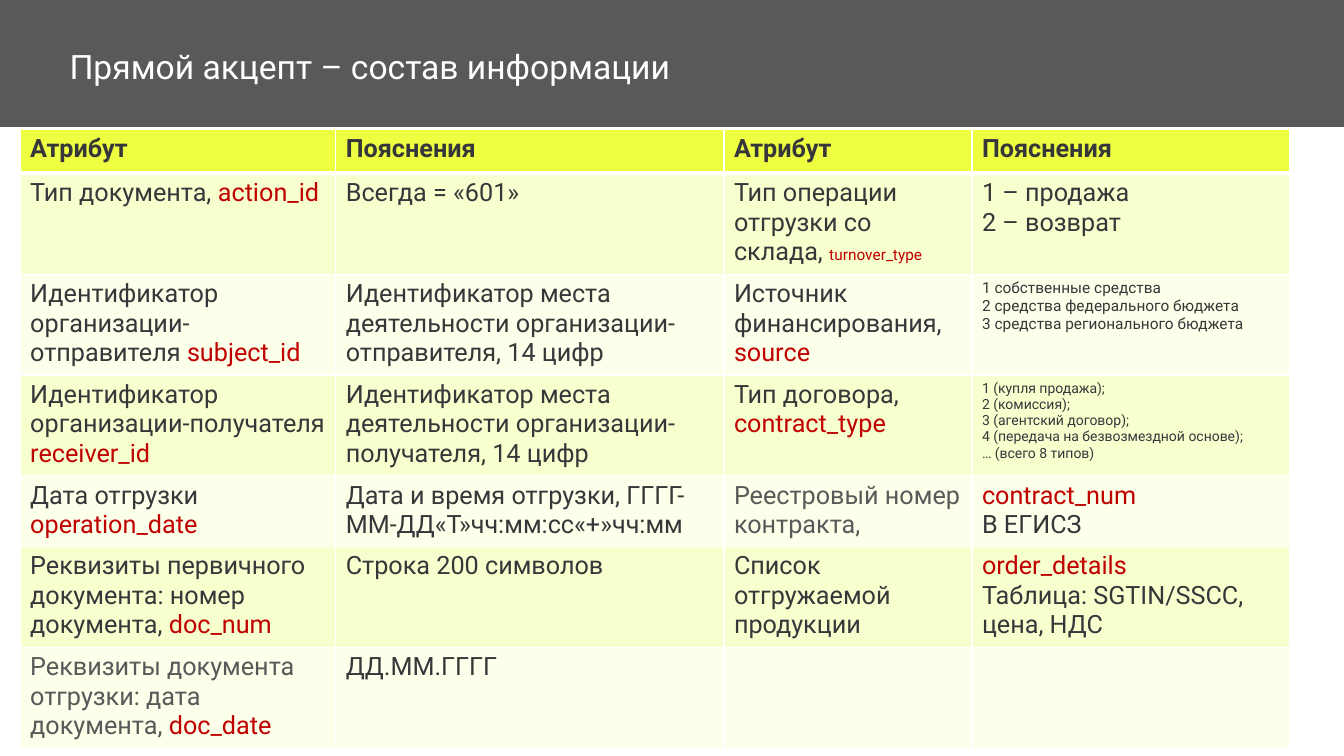
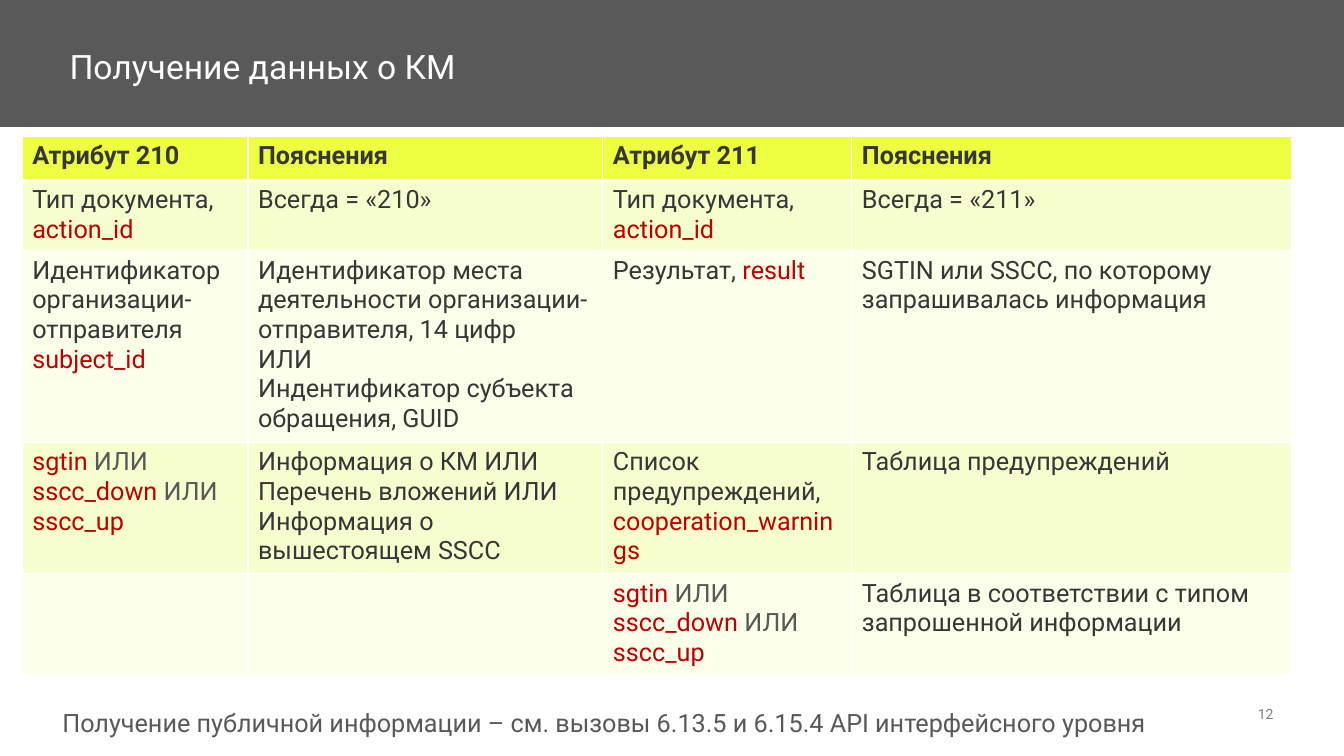
import typing

import pptx
import pptx.dml.color
import pptx.enum.shapes
import pptx.enum.text
import pptx.oxml
import pptx.oxml.ns
import pptx.util

Inches = pptx.util.Inches
Pt = pptx.util.Pt
RGBColor = pptx.dml.color.RGBColor
Align = pptx.enum.text.PP_ALIGN
Anchor = pptx.enum.text.MSO_ANCHOR

FONT = "Roboto"
WHITE = RGBColor(0xFF, 0xFF, 0xFF)
GREY = RGBColor(0x59, 0x59, 0x59)
PAGE_NUMBER_GREY = RGBColor(0x80, 0x80, 0x80)
DARK = RGBColor(0x37, 0x37, 0x3A)
RED = RGBColor(0xC0, 0x00, 0x00)
HEADER_FILL = RGBColor(0xEE, 0xFF, 0x41)
ROW_FILLS = (RGBColor(0xF8, 0xFF, 0xCF), RGBColor(0xFC, 0xFF, 0xE9))


class Cell(typing.NamedTuple):
    """Cell text: one paragraph a line, field names between backticks."""
    text: str
    size: int = 18
    colour: RGBColor = DARK
    field_size: int = 18


CODE_CHOICE = Cell("`sgtin `ИЛИ `sscc_down `ИЛИ `sscc_up`", colour=GREY)

SLIDES = [
    {
        "title": "Прямой акцепт – состав информации",
        "table_at": (0.2, 1.28),
        "columns": (3.13, 3.85, 2.46, 3.15),
        "row_heights": (0.44, 0.98, 0.98, 0.98, 0.69, 0.98, 0.98),
        "rows": [
            ("Атрибут", "Пояснения", "Атрибут", "Пояснения"),
            ("Тип документа, `action_id`", "Всегда = «601»",
             Cell("Тип операции отгрузки со\nсклада, `turnover_type`", field_size=11),
             "1 – продажа\n2 – возврат"),
            ("Идентификатор организации-отправителя `subject_id`",
             "Идентификатор места деятельности организации-отправителя, 14 цифр",
             "Источник финансирования, `source`",
             Cell("1 собственные средства\n2 средства федерального бюджета\n"
                  "3 средства регионального бюджета", size=11)),
            ("Идентификатор организации-получателя `receiver_id`",
             "Идентификатор места деятельности организации-получателя, 14 цифр",
             "Тип договора, `contract_type`",
             Cell("1 (купля продажа);\n2 (комиссия);\n3 (агентский договор);\n"
                  "4 (передача на безвозмездной основе);\n… (всего 8 типов)", size=10)),
            ("Дата отгрузки `operation_date`",
             "Дата и время отгрузки, ГГГГ-ММ-ДД«Т»чч:мм:сс«+»чч:мм",
             Cell("Реестровый номер контракта,", colour=GREY),
             "`contract_num`\nВ ЕГИСЗ"),
            ("Реквизиты первичного\nдокумента: номер документа, `doc_num`",
             "Строка 200 символов", "Список отгружаемой продукции",
             "`order_details`\nТаблица: SGTIN/SSCC, цена, НДС"),
            (Cell("Реквизиты документа отгрузки: дата документа, `doc_date`", colour=GREY),
             "ДД.ММ.ГГГГ", "", ""),
        ],
    },
    {
        "title": "Получение данных о КМ",
        "table_at": (0.22, 1.35),
        "columns": (2.24, 3.52, 2.47, 4.36),
        "row_heights": (0.44, 0.69, 1.86, 1.27, 0.98),
        "rows": [
            ("Атрибут 210", "Пояснения", "Атрибут 211", "Пояснения"),
            ("Тип документа, `action_id`", "Всегда = «210»",
             "Тип документа, `action_id`", "Всегда = «211»"),
            ("Идентификатор организации-отправителя `subject_id`",
             "Идентификатор места деятельности организации-отправителя, 14 цифр\n"
             "ИЛИ\nИндентификатор субъекта обращения, GUID",
             "Результат, `result`",
             "SGTIN или SSCC, по которому запрашивалась информация"),
            (CODE_CHOICE,
             "Информация о КМ ИЛИ\nПеречень вложений ИЛИ\nИнформация о вышестоящем SSCC",
             "Список предупреждений, `cooperation_warnings`",
             "Таблица предупреждений"),
            ("", "", CODE_CHOICE,
             "Таблица в соответствии с типом запрошенной информации"),
        ],
        "note": "Получение публичной информации – см. вызовы 6.13.5 и 6.15.4 "
                "API интерфейсного уровня",
        "page_number": "12",
    },
]


def set_font(font, size, colour):
    font.name = FONT
    font.size = Pt(size)
    font.color.rgb = colour


def add_text(page, text, at, size, colour, anchor=Anchor.MIDDLE, align=Align.LEFT, inset=0.0):
    box = page.shapes.add_textbox(*map(Inches, at))
    frame = box.text_frame
    frame.word_wrap = True
    frame.vertical_anchor = anchor
    frame.margin_left = frame.margin_right = Inches(inset)
    frame.margin_top = frame.margin_bottom = Inches(inset / 2)
    para = frame.paragraphs[0]
    para.text = text
    para.alignment = align
    set_font(para.font, size, colour)
    return para


def add_title(page, title):
    band = page.shapes.add_shape(pptx.enum.shapes.MSO_SHAPE.RECTANGLE,
                                 0, 0, Inches(13.33), Inches(1.26))
    band.shadow.inherit = False
    band.fill.solid()
    band.fill.fore_color.rgb = GREY
    band.line.color.rgb = GREY
    band.line.width = Pt(0.75)
    para = add_text(page, title, (0.69, 0.17, 11.96, 1.03), 24, WHITE)
    para.line_spacing = 0.9


def set_borders(cell, top, bottom):
    """Draw white borders; top and bottom are widths in points."""
    properties = cell._tc.get_or_add_tcPr()
    widths = (("lnL", 1), ("lnR", 1), ("lnT", top), ("lnB", bottom))
    for position, (side, width) in enumerate(widths):
        line = pptx.oxml.parse_xml(
            f'<a:{side} {pptx.oxml.ns.nsdecls("a")} w="{Pt(width)}">'
            f'<a:solidFill><a:srgbClr val="{WHITE}"/></a:solidFill></a:{side}>')
        properties.insert(position, line)


def fill_cell(cell, content, bold):
    if isinstance(content, str):
        content = Cell(content)
    frame = cell.text_frame
    for index, line in enumerate(content.text.split("\n")):
        para = frame.add_paragraph() if index else frame.paragraphs[0]
        set_font(para.font, content.size, content.colour)
        para.font.bold = bold
        for part, text in enumerate(line.split("`")):
            if not text:
                continue
            span = para.add_run()
            span.text = text
            is_field = part % 2 == 1
            set_font(span.font, content.field_size if is_field else content.size,
                     RED if is_field else content.colour)
            span.font.bold = bold


def add_attribute_table(page, at, columns, row_heights, rows):
    left, top = at
    table = page.shapes.add_table(
        len(rows), len(columns), Inches(left), Inches(top),
        Inches(sum(columns)), Inches(sum(row_heights))).table
    for column, width in zip(table.columns, columns):
        column.width = Inches(width)
    for row_index, (row, height) in enumerate(zip(rows, row_heights)):
        table.rows[row_index].height = Inches(height)
        is_header = row_index == 0
        for column_index, content in enumerate(row):
            cell = table.cell(row_index, column_index)
            cell.fill.solid()
            cell.fill.fore_color.rgb = HEADER_FILL if is_header else ROW_FILLS[(row_index - 1) % 2]
            set_borders(cell, 3 if row_index == 1 else 1, 3 if is_header else 1)
            fill_cell(cell, content, is_header)


def main():
    deck = pptx.Presentation()
    deck.slide_width = Inches(13.33)
    deck.slide_height = Inches(7.5)
    for content in SLIDES:
        page = deck.slides.add_slide(deck.slide_layouts[6])
        add_title(page, content["title"])
        add_attribute_table(page, content["table_at"], content["columns"],
                            content["row_heights"], content["rows"])
        if "note" in content:
            add_text(page, content["note"], (0.52, 7, 11.6, 0.33), 18, GREY, inset=0.1)
        if "page_number" in content:
            add_text(page, content["page_number"], (12.21, 7, 0.42, 0.17), 10,
                     PAGE_NUMBER_GREY, Anchor.BOTTOM, Align.RIGHT)
    deck.save("out.pptx")


if __name__ == "__main__":
    main()
